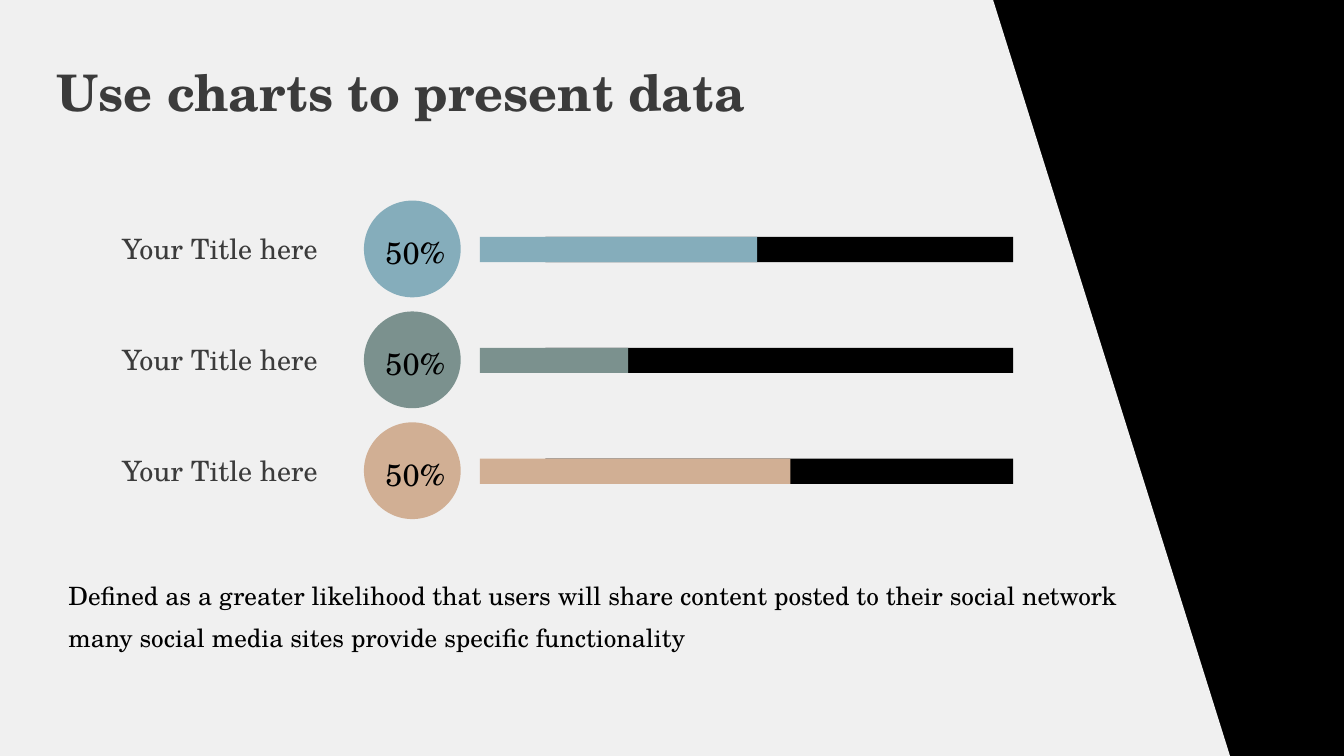
from dataclasses import dataclass

from pptx import Presentation
from pptx.dml.color import RGBColor
from pptx.enum.shapes import MSO_SHAPE
from pptx.enum.text import MSO_ANCHOR, MSO_AUTO_SIZE, PP_ALIGN
from pptx.util import Inches, Pt


@dataclass(frozen=True)
class Theme:
    font: str = "TeX Gyre Schola"
    black: str = "000000"
    panel: str = "F0F0F0"
    heading: str = "3B3B3B"
    blue: str = "85ADBB"
    green: str = "7B918E"
    sand: str = "D1AF94"
    title_size: int = 36
    percent_size: int = 22
    label_size: int = 20
    summary_size: int = 18


THEME = Theme()
ROW_PITCH = 1.1
BAR_LEFT, BAR_TOP, BAR_HEIGHT = 4.76, 2.35, 0.25
TRACK_LEFT, TRACK_WIDTH = 5.41, 4.64
ROWS = [
    ("Your Title here", "50%", 2.75, THEME.blue),
    ("Your Title here", "50%", 1.47, THEME.green),
    ("Your Title here", "50%", 3.08, THEME.sand),
]
SUMMARY = (
    "Defined as a greater likelihood that users will share content posted to "
    "their social network many social media sites provide specific functionality"
)


def paint(shape, color):
    shape.shadow.inherit = False
    shape.fill.solid()
    shape.fill.fore_color.rgb = RGBColor.from_string(color)
    shape.line.fill.background()


def write(holder, text, *, size, color, bold=False, align=PP_ALIGN.LEFT,
          spacing=None, anchor=MSO_ANCHOR.TOP, inset=True):
    frame = holder.text_frame
    frame.word_wrap = True
    frame.auto_size = MSO_AUTO_SIZE.NONE
    frame.vertical_anchor = anchor
    if not inset:
        frame.margin_left = frame.margin_right = 0
        frame.margin_top = frame.margin_bottom = 0
    frame.text = text
    paragraph = frame.paragraphs[0]
    paragraph.alignment = align
    paragraph.line_spacing = spacing
    font = paragraph.runs[0].font
    font.name = THEME.font
    font.size = Pt(size)
    font.bold = bold
    font.color.rgb = RGBColor.from_string(color)


def add_text(slide, box, text, **style):
    holder = slide.shapes.add_textbox(*map(Inches, box))
    write(holder, text, **style)


def add_filled(slide, preset, box, color):
    shape = slide.shapes.add_shape(preset, *map(Inches, box))
    paint(shape, color)


def add_panel(slide):
    corners = [(9.85, 0), (12.2, 7.5), (0, 7.5)]
    outline = slide.shapes.build_freeform(0, 0)
    outline.add_line_segments([(Inches(x), Inches(y)) for x, y in corners])
    panel = outline.convert_to_shape()
    paint(panel, THEME.panel)
    slide.shapes.title.element.addprevious(panel.element)


def add_title(slide, text):
    title = slide.shapes.title
    title.left, title.top = Inches(0.56), Inches(0.6)
    title.width, title.height = Inches(9.49), Inches(0.61)
    write(title, text, size=THEME.title_size, color=THEME.heading, bold=True,
          anchor=MSO_ANCHOR.MIDDLE, inset=False)


def add_progress_row(slide, offset, label, percent, width, color):
    bar_top = BAR_TOP + offset
    add_filled(slide, MSO_SHAPE.RECTANGLE,
               (TRACK_LEFT, bar_top, TRACK_WIDTH, BAR_HEIGHT), THEME.black)
    add_filled(slide, MSO_SHAPE.RECTANGLE,
               (BAR_LEFT, bar_top, width, BAR_HEIGHT), color)
    add_filled(slide, MSO_SHAPE.OVAL, (3.61, 1.99 + offset, 0.96, 0.96), color)
    add_text(slide, (1.02, 2.25 + offset, 2.23, 0.44), label,
             size=THEME.label_size, color=THEME.heading, align=PP_ALIGN.RIGHT)
    add_text(slide, (3.77, 2.25 + offset, 0.7, 0.41), percent,
             size=THEME.percent_size, color=THEME.black,
             align=PP_ALIGN.CENTER, spacing=1.2, inset=False)


def main():
    deck = Presentation()
    deck.slide_width, deck.slide_height = Inches(13.33), Inches(7.5)
    slide = deck.slides.add_slide(deck.slide_layouts.get_by_name("Title Only"))
    slide.background.fill.solid()
    slide.background.fill.fore_color.rgb = RGBColor.from_string(THEME.black)
    add_panel(slide)
    add_title(slide, "Use charts to present data")
    for index, row in enumerate(ROWS):
        add_progress_row(slide, index * ROW_PITCH, *row)
    add_text(slide, (0.58, 5.59, 10.68, 0.9), SUMMARY,
             size=THEME.summary_size, color=THEME.black, spacing=Pt(30))
    deck.save("out.pptx")


if __name__ == "__main__":
    main()
